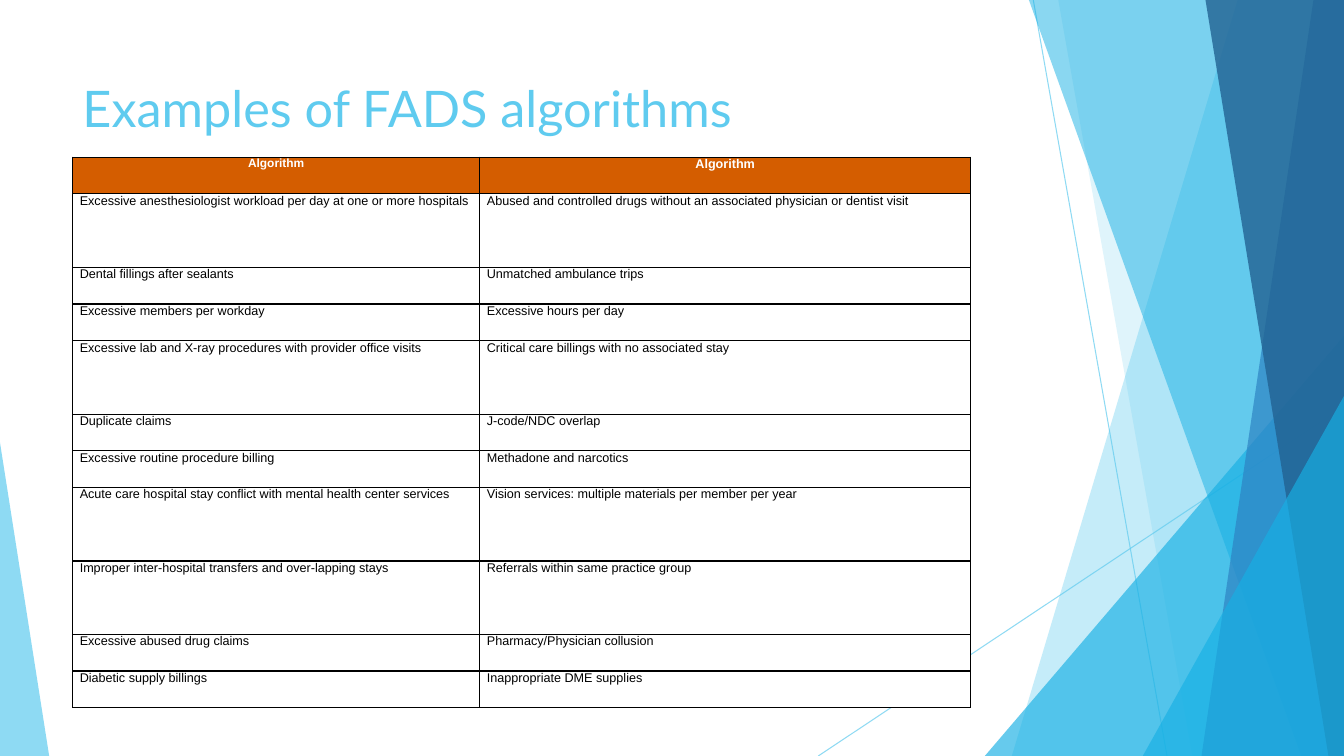
from lxml import etree
from pptx import Presentation
from pptx.dml.color import RGBColor
from pptx.enum.shapes import MSO_CONNECTOR, MSO_SHAPE
from pptx.enum.text import MSO_ANCHOR, PP_ALIGN
from pptx.oxml.ns import qn
from pptx.util import Cm, Pt

STRAIGHT = MSO_CONNECTOR.STRAIGHT
TRIANGLE = MSO_SHAPE.ISOSCELES_TRIANGLE
TOP = MSO_ANCHOR.TOP
LEFT, CENTER = PP_ALIGN.LEFT, PP_ALIGN.CENTER

# Content
TITLE = "Examples of FADS algorithms"
HEADER = ("Algorithm", "Algorithm")
# Row height in units, left text, right text
ALGORITHMS = [
    (2, "Excessive anesthesiologist workload per day at one or more hospitals",
     "Abused and controlled drugs without an associated physician or dentist visit"),
    (1, "Dental fillings after sealants", "Unmatched ambulance trips"),
    (1, "Excessive members per workday", "Excessive hours per day"),
    (2, "Excessive lab and X-ray procedures with provider office visits",
     "Critical care billings with no associated stay"),
    (1, "Duplicate claims", "J-code/NDC overlap"),
    (1, "Excessive routine procedure billing", "Methadone and narcotics"),
    (2, "Acute care hospital stay conflict with mental health center services",
     "Vision services: multiple materials per member per year"),
    (2, "Improper inter-hospital transfers and over-lapping stays",
     "Referrals within same practice group"),
    (1, "Excessive abused drug claims", "Pharmacy/Physician collusion"),
    (1, "Diabetic supply billings", "Inappropriate DME supplies"),
]

THEME = {
    "sky": "5FCBEF", "cyan": "17B0E4", "blue": "2E83C3", "navy": "226292",
    "header": "D45D00", "white": "FFFFFF", "black": "000000",
    "title_font": "Lato", "table_font": "Arial",
    "title_size": 36, "header_sizes": (8.5, 9), "body_size": 9,
    "hairline": 0.75, "border": 1,
}

# Geometry in centimetres
WIDTH, HEIGHT = 33.87, 19.05
RAYS = [((26.04, 0), (29.41, HEIGHT)), ((WIDTH, 10.24), (20.62, HEIGHT))]
# Bands run to the right edge: (top left x, bottom left x, colour, opacity %)
# Triangles stand on the bottom edge: (left, top, width, peak, colour, opacity %)
FACETS = [
    ("band", 31.19, 25.5, "sky", 36),
    ("band", 26.67, 30.05, "sky", 20),
    ("triangle", 24.82, 8.46, 9.05, 1, "cyan", 66),
    ("band", 25.93, 32.79, "cyan", 50),
    ("band", 33.1, 30.28, "blue", 70),
    ("band", 30.38, 33.48, "navy", 80),
    ("triangle", 28.8, 9.98, 5.07, 1, "cyan", 66),
    ("triangle", 0, 11.15, 1.24, 0, "sky", 70),
]
TITLE_BOX = (1.83, 1.83, 23.88, 3.66)
TABLE_LEFT, TABLE_TOP = 1.83, 3.96
COLUMNS = (10.26, 12.37)
ROW_UNIT = 0.925
CELL_INSET = 0.18


def rgb(name):
    return RGBColor.from_string(THEME[name])


def set_all(obj, values):
    for name, value in values.items():
        setattr(obj, name, value)


def set_opacity(sp, percent):
    for color in sp._element.spPr.iter(qn("a:srgbClr")):
        etree.SubElement(color, qn("a:alpha"), val=str(percent * 1000))


def add_ray(shapes, start, end):
    line = shapes.add_connector(STRAIGHT, *map(Cm, start + end))
    line.line.color.rgb = rgb("sky")
    line.line.width = Pt(THEME["hairline"])
    set_opacity(line, 70)
    etree.SubElement(line._element.spPr, qn("a:effectLst"))


def add_band(shapes, top_x, bottom_x):
    outline = shapes.build_freeform(Cm(top_x), Cm(0))
    corners = [(WIDTH, 0), (WIDTH, HEIGHT), (bottom_x, HEIGHT)]
    outline.add_line_segments([(Cm(x), Cm(y)) for x, y in corners], close=True)
    return outline.convert_to_shape()


def add_triangle(shapes, left, top, width, peak):
    sp = shapes.add_shape(TRIANGLE, Cm(left), Cm(top), Cm(width), Cm(HEIGHT - top))
    sp.adjustments[0] = peak
    return sp


def add_text(tf, text, para, font):
    p = tf.paragraphs[0]
    set_all(p, para)
    r = p.add_run()
    r.text = text
    color = font.pop("color")
    set_all(r.font, font)
    r.font.color.rgb = rgb(color)


def add_borders(cell):
    tc_pr = cell._tc.get_or_add_tcPr()
    for i, side in enumerate(("a:lnL", "a:lnR", "a:lnT", "a:lnB")):
        ln = etree.Element(qn(side), w=str(Pt(THEME["border"])))
        fill = etree.SubElement(ln, qn("a:solidFill"))
        etree.SubElement(fill, qn("a:srgbClr"), val=THEME["black"])
        tc_pr.insert(i, ln)


def fill_cell(cell, text, is_header, size):
    set_all(cell, {"margin_left": Cm(CELL_INSET), "margin_right": Cm(CELL_INSET),
                   "margin_top": 0, "margin_bottom": 0, "vertical_anchor": TOP})
    cell.fill.solid()
    cell.fill.fore_color.rgb = rgb("header" if is_header else "white")
    add_text(cell.text_frame, text,
             {"alignment": CENTER if is_header else LEFT,
              "space_before": Pt(4), "space_after": Pt(4)},
             {"name": THEME["table_font"], "size": Pt(size), "bold": is_header,
              "color": "white" if is_header else "black"})
    add_borders(cell)


def main():
    prs = Presentation()
    prs.slide_width, prs.slide_height = Cm(WIDTH), Cm(HEIGHT)
    s = prs.slides.add_slide(prs.slide_layouts[6])

    # Background facets
    for start, end in RAYS:
        add_ray(s.shapes, start, end)
    builders = {"band": add_band, "triangle": add_triangle}
    for kind, *place, color, opacity in FACETS:
        sp = builders[kind](s.shapes, *place)
        sp.shadow.inherit = False
        sp.fill.solid()
        sp.fill.fore_color.rgb = rgb(color)
        sp.line.fill.background()
        set_opacity(sp, opacity)

    # Title
    tf = s.shapes.add_textbox(*map(Cm, TITLE_BOX)).text_frame
    set_all(tf, {"word_wrap": True, "vertical_anchor": TOP})
    add_text(tf, TITLE, {"alignment": LEFT},
             {"name": THEME["title_font"], "size": Pt(THEME["title_size"]),
              "color": "sky"})

    # Table
    rows = [(1, *HEADER)] + ALGORITHMS
    total = sum(units for units, *_ in rows) * ROW_UNIT
    table = s.shapes.add_table(len(rows), len(COLUMNS), Cm(TABLE_LEFT), Cm(TABLE_TOP),
                               Cm(sum(COLUMNS)), Cm(total)).table
    set_all(table, {"first_row": False, "horz_banding": False})
    for column, width in zip(table.columns, COLUMNS):
        column.width = Cm(width)
    for i, (units, *texts) in enumerate(rows):
        table.rows[i].height = Cm(units * ROW_UNIT)
        for j, text in enumerate(texts):
            size = THEME["body_size"] if i else THEME["header_sizes"][j]
            fill_cell(table.cell(i, j), text, i == 0, size)

    prs.save("out.pptx")


if __name__ == "__main__":
    main()
